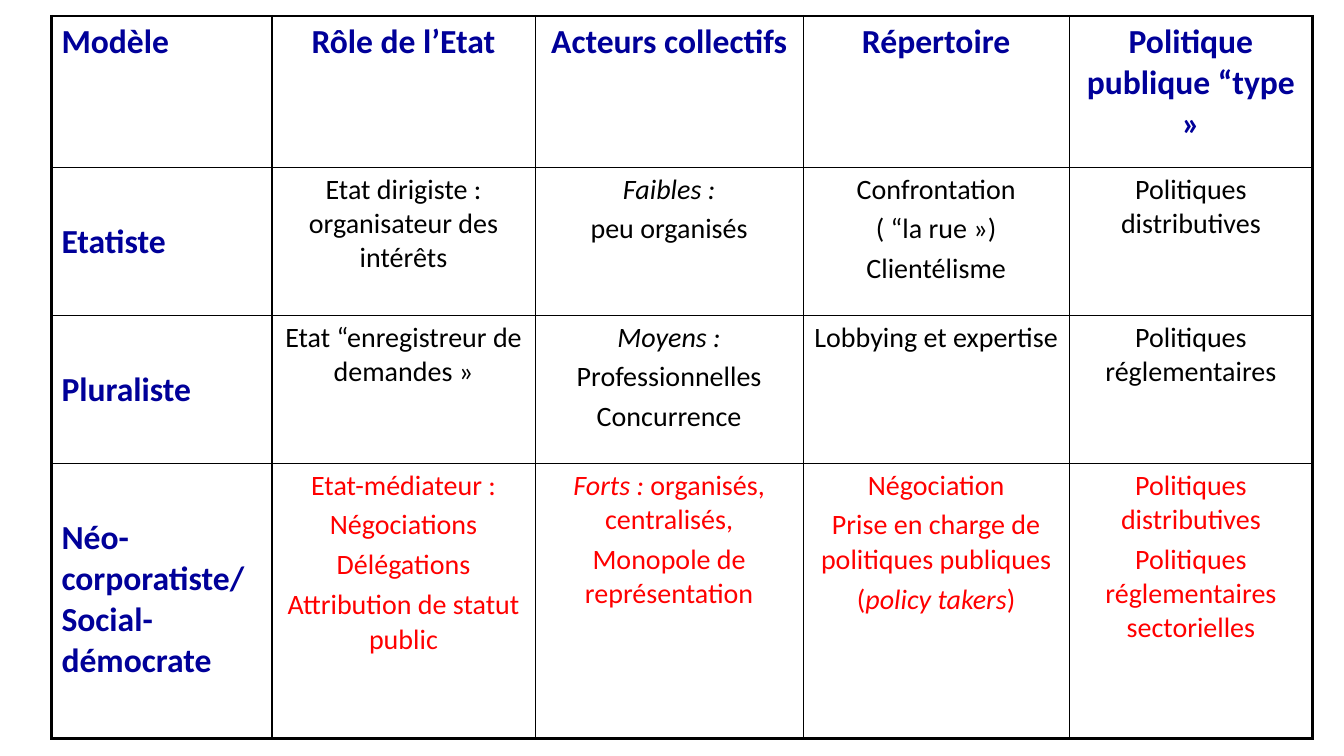
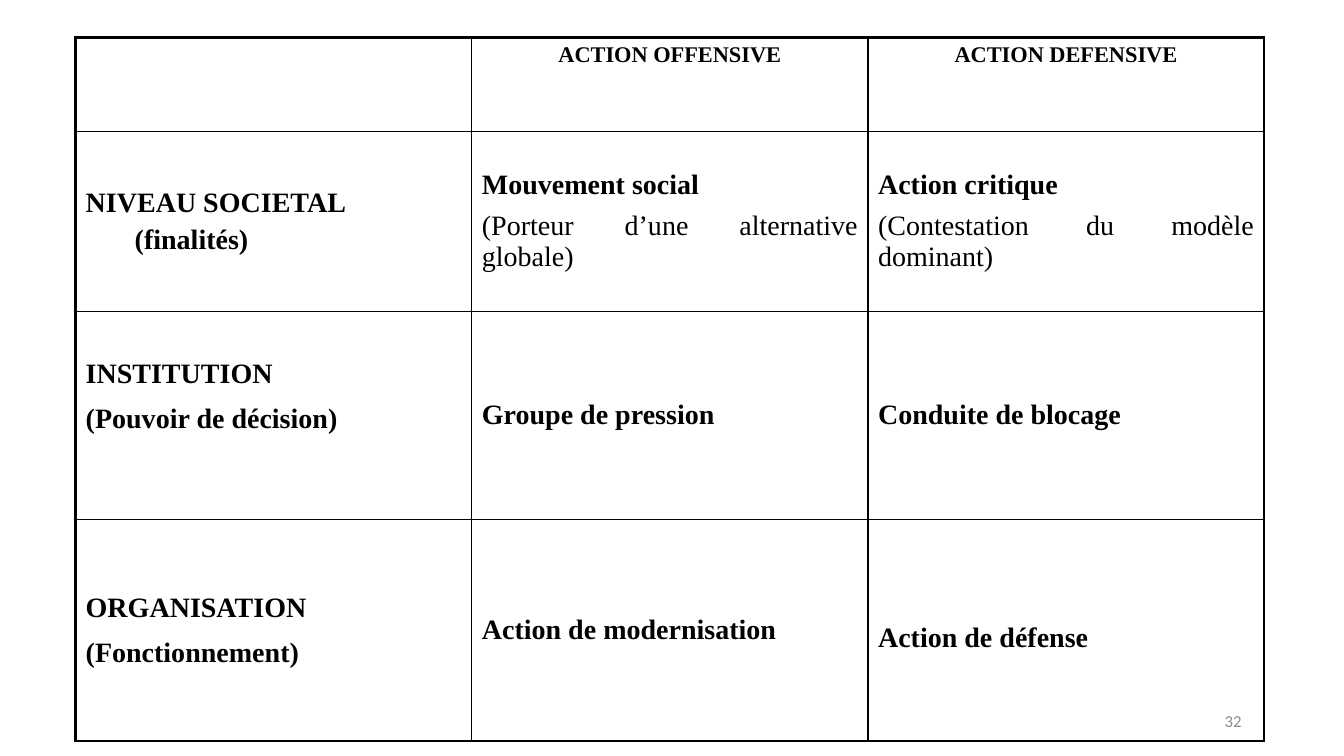
from dataclasses import dataclass, field
from typing import NamedTuple

from lxml.etree import SubElement
from pptx import Presentation
from pptx.dml.color import RGBColor
from pptx.enum.text import MSO_ANCHOR as Anchor, PP_ALIGN as Align
from pptx.oxml.ns import qn
from pptx.util import Pt


@dataclass(frozen=True)
class Theme:
    """Colours, fonts, type sizes and line widths of the slides."""
    black: str = "000000"
    blue: str = "000099"
    red: str = "FF0000"
    grey: str = "8C8C8C"
    sans: str = "Calibri"
    serif: str = "Times New Roman"
    heading: int = 24
    body: int = 20
    column_head: int = 16
    number: int = 12
    outer_line: float = 2.25
    inner_line: float = 1
    plain_table: str = "{2D5ABB26-0587-4C30-8999-92F81FD0307C}"


THEME = Theme()


class Box(NamedTuple):
    """A rectangle in points."""
    left: float
    top: float
    width: float
    height: float


class Style(NamedTuple):
    """The look of one paragraph."""
    font: str
    size: int
    color: str = THEME.black
    bold: bool = False
    align: Align = Align.LEFT
    after: float = 0
    indent: float = 0


@dataclass
class Cell:
    """Paragraphs as (style, text) pairs, with format values for the cell."""
    paragraphs: list = field(default_factory=list)
    values: dict = field(default_factory=dict)


MODEL = Style(THEME.sans, THEME.heading, THEME.blue, True)
MODEL_HEAD = MODEL._replace(align=Align.CENTER)
FEATURE = Style(THEME.sans, THEME.body, align=Align.CENTER)
HIGHLIGHT = FEATURE._replace(color=THEME.red)
LEVEL = Style(THEME.serif, THEME.body, bold=True)
SPACED_LEVEL = LEVEL._replace(after=6)
ACTION = LEVEL._replace(after=3)
NOTE = LEVEL._replace(bold=False, align=Align.JUSTIFY)
ACTION_HEAD = LEVEL._replace(size=THEME.column_head, align=Align.CENTER)
PAGE_NUMBER = Style(THEME.sans, THEME.number, THEME.grey, align=Align.RIGHT)

MODEL_HEADS = ["Modèle", "Rôle de l’Etat", "Acteurs collectifs", "Répertoire",
               "Politique publique “type »"]
MODEL_ROWS = [
    ("Etatiste", FEATURE, [
        ["Etat dirigiste : organisateur des intérêts"],
        ["_Faibles :_", "peu organisés"],
        ["Confrontation", "( “la rue »)", "Clientélisme"],
        ["Politiques distributives"]]),
    ("Pluraliste", FEATURE, [
        ["Etat “enregistreur de demandes »"],
        ["_Moyens :_", "Professionnelles", "Concurrence"],
        ["Lobbying et expertise"],
        ["Politiques réglementaires"]]),
    ("Néo-corporatiste/ Social-démocrate", HIGHLIGHT, [
        ["Etat-médiateur :", "Négociations", "Délégations",
         "Attribution de statut public"],
        ["_Forts :_ organisés, centralisés,", "Monopole de représentation"],
        ["Négociation", "Prise en charge de politiques publiques",
         "(_policy takers_)"],
        ["Politiques distributives",
         "Politiques réglementaires sectorielles"]]),
]


def apply(target, values):
    """Set every named value on the target."""
    for name, value in values.items():
        setattr(target, name, value)


def write(frame, paragraphs):
    """Fill a text frame; underscores enclose italic words."""
    for index, (style, text) in enumerate(paragraphs):
        paragraph = frame.add_paragraph() if index else frame.paragraphs[0]
        apply(paragraph, {
            "alignment": style.align,
            "space_before": Pt(0.2 * style.size if index else 0),
            "space_after": Pt(style.after),
        })
        if style.indent:
            paragraph._p.get_or_add_pPr().set("marL", str(Pt(style.indent)))
        for part, words in enumerate(text.split("_")):
            if words:
                run = paragraph.add_run()
                run.text = words
                apply(run.font, {"name": style.font, "size": Pt(style.size),
                                 "bold": style.bold, "italic": part % 2 == 1})
                run.font.color.rgb = RGBColor.from_string(style.color)


def draw_borders(cell, outer_sides):
    """Rule the four sides of a cell, heavier on the table's edge."""
    properties = cell._tc.get_or_add_tcPr()
    for side, outer in outer_sides.items():
        width = THEME.outer_line if outer else THEME.inner_line
        line = SubElement(properties, qn(f"a:ln{side}"), w=str(Pt(width)))
        fill = SubElement(line, qn("a:solidFill"))
        SubElement(fill, qn("a:srgbClr"), val=THEME.black)


def add_grid(slide, left, top, widths, heights, rows):
    """Place a ruled table of cells at the given corner."""
    box = Box(left, top, sum(widths), sum(heights))
    shape = slide.shapes.add_table(len(heights), len(widths), *map(Pt, box))
    table = shape.table
    apply(table, {"first_row": False, "horz_banding": False})
    table._tbl.tblPr.find(qn("a:tableStyleId")).text = THEME.plain_table
    for column, width in zip(table.columns, widths):
        column.width = Pt(width)
    for row, height in zip(table.rows, heights):
        row.height = Pt(height)
    for y, row in enumerate(rows):
        for x, content in enumerate(row):
            cell = table.cell(y, x)
            draw_borders(cell, {"L": x == 0, "R": x == len(widths) - 1,
                                "T": y == 0, "B": y == len(heights) - 1})
            cell.fill.background()
            apply(cell, content.values)
            write(cell.text_frame, content.paragraphs)


def add_page_number(slide, box, number):
    """Write the page number at the right of its box."""
    frame = slide.shapes.add_textbox(*map(Pt, box)).text_frame
    apply(frame, {"word_wrap": True, "vertical_anchor": Anchor.MIDDLE})
    write(frame, [(PAGE_NUMBER, number)])


def build_models(slide):
    """Compare the three models of interest representation."""
    rows = [[Cell([(MODEL_HEAD if x else MODEL, text)])
             for x, text in enumerate(MODEL_HEADS)]]
    for model, style, features in MODEL_ROWS:
        name = Cell([(MODEL, model)], {"margin_top": Pt(38.6)})
        rows.append([name] + [Cell([(style, text) for text in texts])
                              for texts in features])
    add_grid(slide, 36.75, 11.5, [157.5, 188, 191.5, 190, 174],
             [108, 105.75, 105.75, 196.5], rows)


def build_actions(slide):
    """Cross the levels of action with offensive and defensive action."""
    def middle(*paragraphs, **margins):
        """Make a vertically centred cell."""
        return Cell(list(paragraphs), {"vertical_anchor": Anchor.MIDDLE, **margins})

    rows = [
        [Cell(), Cell([(ACTION_HEAD, "ACTION OFFENSIVE")]),
         Cell([(ACTION_HEAD, "ACTION DEFENSIVE")])],
        [middle((LEVEL, "NIVEAU SOCIETAL"),
                (LEVEL._replace(indent=35), "(finalités)")),
         middle((ACTION, "Mouvement social"),
                (NOTE, "(Porteur d’une alternative globale)")),
         middle((ACTION, "Action critique"),
                (NOTE, "(Contestation du modèle dominant)"))],
        [middle((SPACED_LEVEL, "INSTITUTION"),
                (SPACED_LEVEL, "(Pouvoir de décision)"), margin_bottom=Pt(30.6)),
         middle((ACTION, "Groupe de pression")),
         middle((ACTION, "Conduite de blocage"))],
        [middle((SPACED_LEVEL, "ORGANISATION"),
                (SPACED_LEVEL, "(Fonctionnement)")),
         middle((ACTION, "Action de modernisation")),
         middle((ACTION, "Action de défense"), margin_top=Pt(15))],
    ]
    add_page_number(slide, Box(678, 500.5, 216, 28.75), "32")
    add_grid(slide, 54, 26.75, [283] * 3, [67, 128.5, 149, 158], rows)


def main():
    """Build and save the presentation."""
    presentation = Presentation()
    apply(presentation, {"slide_width": Pt(960), "slide_height": Pt(540)})
    blank = presentation.slide_layouts[6]
    for build in (build_models, build_actions):
        build(presentation.slides.add_slide(blank))
    presentation.save("out.pptx")


if __name__ == "__main__":
    main()
